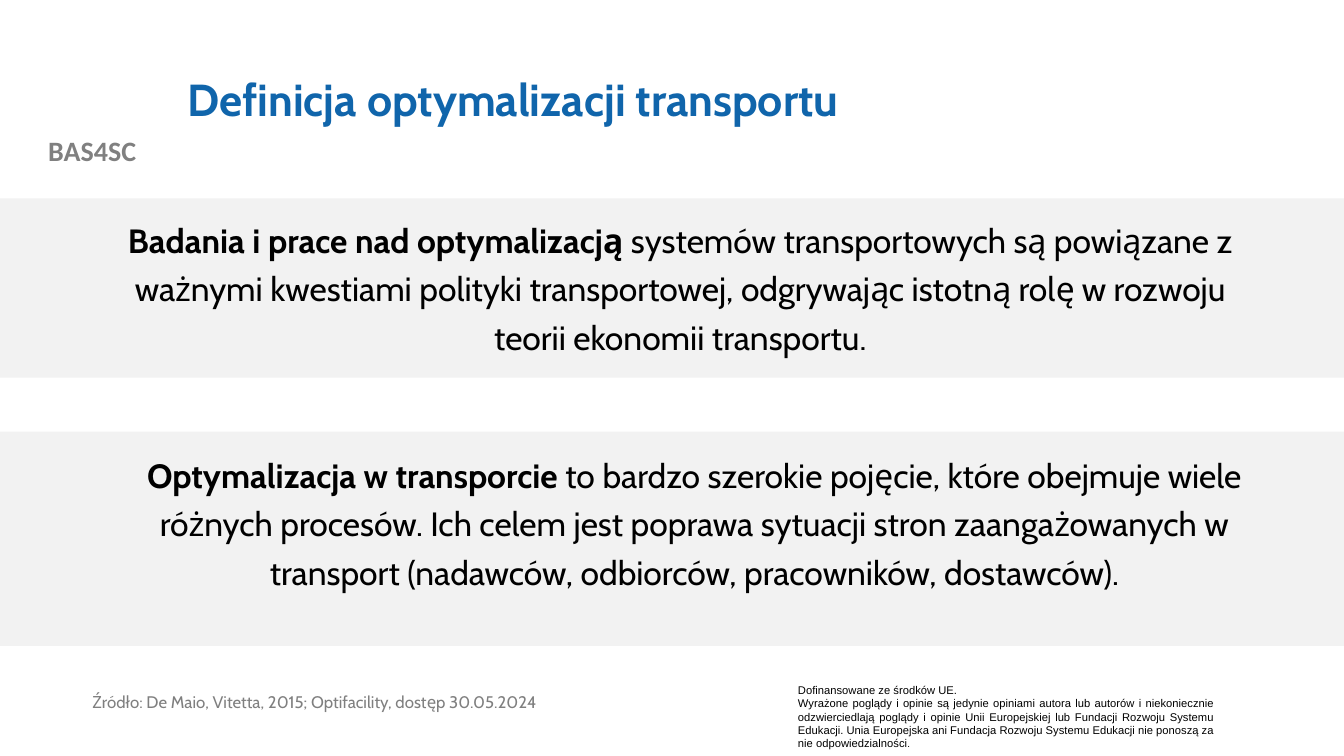
from dataclasses import dataclass

from pptx import Presentation
from pptx.dml.color import RGBColor
from pptx.enum.shapes import MSO_SHAPE
from pptx.enum.text import MSO_ANCHOR, PP_ALIGN
from pptx.util import Cm, Pt


@dataclass(frozen=True)
class Theme:
    """Colours, fonts and type sizes of the slide."""
    band: str = "F2F2F2"
    title: str = "1065AB"
    text: str = "000000"
    label: str = "808080"
    source: str = "7F7F7F"
    main_font: str = "Cabin"
    label_font: str = "Calibri"
    legal_font: str = "Arial"
    title_size: int = 32
    body_size: int = 24
    label_size: int = 20
    source_size: int = 12
    legal_size: int = 8
    stop_size: int = 7


class SlideBuilder:
    """Draws the elements of one slide in a given theme."""

    def __init__(self, s, theme):
        self.s = s
        self.theme = theme

    def band(self, top, height):
        """Add a full-width grey band."""
        sp = self.s.shapes.add_shape(MSO_SHAPE.RECTANGLE, 0, Cm(top), Cm(33.87), Cm(height))
        sp.shadow.inherit = False
        sp.fill.solid()
        sp.fill.fore_color.rgb = RGBColor.from_string(self.theme.band)
        sp.line.fill.background()

    def text(self, box, paragraphs, size, color, font=None, bold=None,
             align=PP_ALIGN.LEFT, spacing=1.0, anchor=MSO_ANCHOR.TOP):
        """Add a text box with one list of runs per paragraph and return its frame."""
        sp = self.s.shapes.add_textbox(*map(Cm, box))
        tf = sp.text_frame
        tf.word_wrap = True
        tf.vertical_anchor = anchor
        for i, runs in enumerate(paragraphs):
            p = tf.add_paragraph() if i else tf.paragraphs[0]
            p.alignment = align
            p.line_spacing = spacing
            p.font.name = font or self.theme.main_font
            p.font.size = Pt(size)
            p.font.bold = bold
            p.font.color.rgb = RGBColor.from_string(color)
            for run in runs:
                p.add_run().text = run
        return tf

    def statement(self, box, lead, rest):
        """Add a centred statement that opens with a bold phrase."""
        tf = self.text(box, [[lead, rest]], self.theme.body_size, self.theme.text,
                       align=PP_ALIGN.CENTER, spacing=1.2)
        tf.paragraphs[0].runs[0].font.bold = True

    def legal(self, box, paragraphs):
        """Add the justified funding note with its smaller full stop."""
        tf = self.text(box, paragraphs, self.theme.legal_size, self.theme.text,
                       font=self.theme.legal_font, align=PP_ALIGN.JUSTIFY)
        tf.paragraphs[-1].runs[-1].font.size = Pt(self.theme.stop_size)


def main():
    """Build the slide and save it."""
    prs = Presentation()
    prs.slide_width, prs.slide_height = Cm(33.87), Cm(19.05)
    theme = Theme()
    slide = SlideBuilder(prs.slides.add_slide(prs.slide_layouts[6]), theme)

    slide.text((0, 3.25, 4.65, 1.12), [["BAS4SC"]], theme.label_size, theme.label,
               font=theme.label_font, bold=True, align=PP_ALIGN.CENTER)
    slide.legal((19.86, 17.09, 11, 1.96), [
        ["Dofinansowane ze środków UE."],
        ["Wyrażone poglądy i opinie są jedynie opiniami autora lub autorów i niekoniecznie "
         "odzwierciedlają poglądy i opinie Unii Europejskiej lub Fundacji Rozwoju Systemu "
         "Edukacji. Unia Europejska ani Fundacja Rozwoju Systemu Edukacji nie ponoszą za "
         "nie odpowiedzialności", "."],
    ])
    slide.band(10.88, 5.4)
    slide.band(5, 4.52)
    slide.text((4.47, 1.02, 27.08, 3.1), [["Definicja optymalizacji transportu"]],
               theme.title_size, theme.title, bold=True, spacing=0.9,
               anchor=MSO_ANCHOR.MIDDLE)
    slide.statement(
        (2.54, 5.21, 29.21, 4.29), "Badania i prace nad optymalizacją ",
        "systemów transportowych są powiązane z ważnymi kwestiami polityki transportowej, "
        "odgrywając istotną rolę w rozwoju teorii ekonomii transportu.")
    slide.statement(
        (2.36, 11.13, 30.28, 4.52), "Optymalizacja w transporcie ",
        "to bardzo szerokie pojęcie, które obejmuje wiele różnych procesów. Ich celem jest "
        "poprawa sytuacji stron zaangażowanych w transport (nadawców, odbiorców, "
        "pracowników, dostawców).")
    slide.text((2.08, 17.37, 14.22, 1.32),
               [["Źródło: De Maio, Vitetta, 2015; Optifacility, dostęp 30.05.2024"]],
               theme.source_size, theme.source, spacing=0.9)
    prs.save("out.pptx")


if __name__ == "__main__":
    main()
